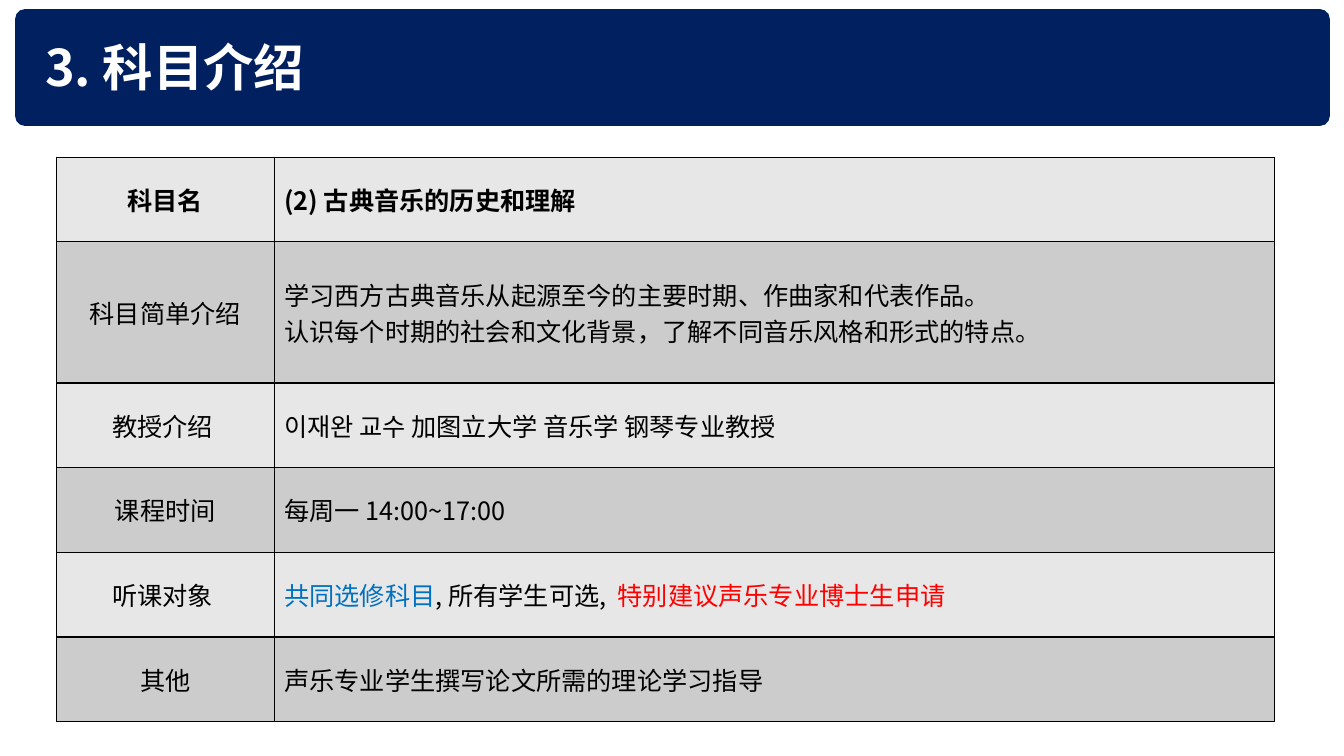
import pptx
import pptx.dml.color
import pptx.enum.shapes
import pptx.enum.text
import pptx.oxml
import pptx.oxml.ns
import pptx.util
from pptx.util import Inches

FONT = "Noto Sans CJK KR"
NAVY, WHITE, BLACK, BLUE, RED = "002060", "FFFFFF", "000000", "0070C0", "FF0000"
ROW_FILLS = ["E7E7E7", "CCCCCC"]
ALIGN = pptx.enum.text.PP_ALIGN
MIDDLE = pptx.enum.text.MSO_ANCHOR.MIDDLE


def rgb(value):
    return pptx.dml.color.RGBColor.from_string(value)


def write(text_frame, paragraphs, size=18, color=BLACK, bold=False, align=ALIGN.LEFT):
    """Fill a frame; each paragraph is a string or a list of (text, color) runs."""
    for index, content in enumerate(paragraphs):
        paragraph = text_frame.paragraphs[0] if index == 0 else text_frame.add_paragraph()
        paragraph.alignment = align
        runs = [(content, color)] if isinstance(content, str) else content
        for text, run_color in runs:
            run = paragraph.add_run()
            run.text = text
            run.font.size = pptx.util.Pt(size)
            run.font.bold = bold
            run.font.color.rgb = rgb(run_color)
            run.font.name = FONT
            east_asian = pptx.oxml.parse_xml(
                f'<a:ea {pptx.oxml.ns.nsdecls("a")} typeface="{FONT}"/>')
            run.font._element.append(east_asian)


presentation = pptx.Presentation()
presentation.slide_width = Inches(13.33)
presentation.slide_height = Inches(7.5)
slide = presentation.slides.add_slide(presentation.slide_layouts[6])

# Title banner
banner = slide.shapes.add_shape(
    pptx.enum.shapes.MSO_SHAPE.ROUNDED_RECTANGLE,
    Inches(0.15), Inches(0.09), Inches(13.04), Inches(1.16))
banner.adjustments[0] = 0.085
banner.shadow.inherit = False
banner.fill.solid()
banner.fill.fore_color.rgb = rgb(NAVY)
banner.line.fill.background()

title = slide.shapes.add_textbox(Inches(0.35), Inches(0.31), Inches(11.73), Inches(0.71))
title.text_frame.word_wrap = True
title.text_frame.auto_size = pptx.enum.text.MSO_AUTO_SIZE.SHAPE_TO_FIT_TEXT
write(title.text_frame, ["3. 科目介绍"], size=36, color=WHITE, bold=True)

# Course table: label, paragraphs, row height
course_rows = [
    ("科目名", ["(2) 古典音乐的历史和理解"], 0.84),
    ("科目简单介绍", ["学习西方古典音乐从起源至今的主要时期、作曲家和代表作品。",
                "认识每个时期的社会和文化背景，了解不同音乐风格和形式的特点。"], 1.4),
    ("教授介绍 ", ["이재완 교수 加图立大学 音乐学 钢琴专业教授"], 0.84),
    ("课程时间", ["每周一 14:00~17:00"], 0.84),
    ("听课对象 ", [[("共同选修科目", BLUE), (", 所有学生可选,  ", BLACK),
                ("特别建议声乐专业博士生申请", RED)]], 0.84),
    ("其他", ["声乐专业学生撰写论文所需的理论学习指导"], 0.84),
]
column_widths = [2.16, 9.92]

table = slide.shapes.add_table(
    len(course_rows), len(column_widths), Inches(0.56), Inches(1.56),
    Inches(sum(column_widths)), Inches(sum(row[2] for row in course_rows))).table
for column, width in zip(table.columns, column_widths):
    column.width = Inches(width)

for row_index, (label, details, height) in enumerate(course_rows):
    table.rows[row_index].height = Inches(height)
    contents = [([label], ALIGN.CENTER), (details, ALIGN.LEFT)]
    for column_index, (paragraphs, align) in enumerate(contents):
        cell = table.cell(row_index, column_index)
        cell.vertical_anchor = MIDDLE
        write(cell.text_frame, paragraphs, bold=row_index == 0, align=align)
        properties = cell._tc.get_or_add_tcPr()
        for side in ("lnL", "lnR", "lnT", "lnB"):
            properties.append(pptx.oxml.parse_xml(
                f'<a:{side} {pptx.oxml.ns.nsdecls("a")} w="{pptx.util.Pt(1)}">'
                f'<a:solidFill><a:srgbClr val="{BLACK}"/></a:solidFill></a:{side}>'))
        cell.fill.solid()
        cell.fill.fore_color.rgb = rgb(ROW_FILLS[row_index % 2])

presentation.save("out.pptx")
